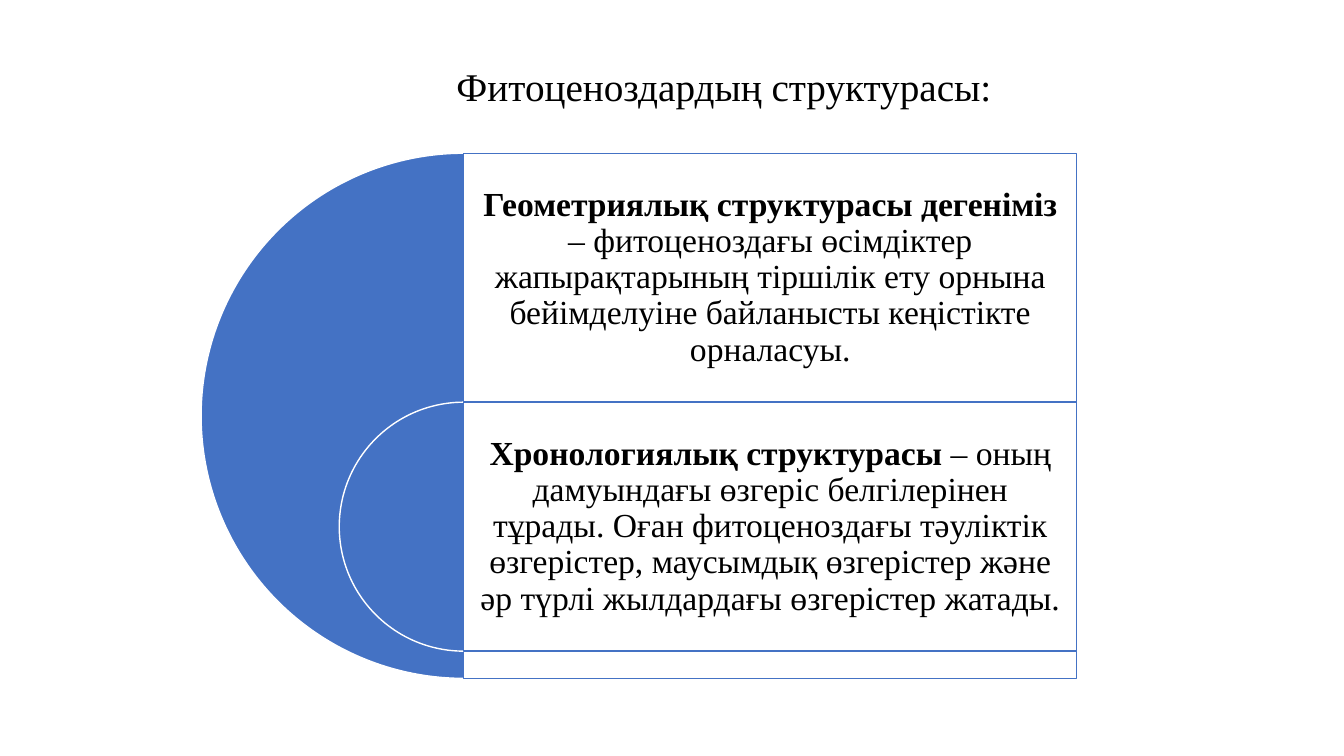
import pptx
import pptx.util
import pptx.dml.color
import pptx.enum.shapes
import pptx.enum.text
from lxml import etree
from pptx.oxml.ns import qn

Inches = pptx.util.Inches
Pt = pptx.util.Pt
Shape = pptx.enum.shapes.MSO_SHAPE
BLUE = pptx.dml.color.RGBColor(0x44, 0x72, 0xC4)
WHITE = pptx.dml.color.RGBColor(0xFF, 0xFF, 0xFF)
BLACK = pptx.dml.color.RGBColor(0, 0, 0)
FONT = "Times New Roman"

LEFT, TOP, WIDTH = 4.6, 1.52, 6.08
OUTER, INNER = 5.21, 2.47

TITLE = "Фитоценоздардың структурасы:"
PARTS = [
    ("Геометриялық структурасы дегеніміз ",
     "– фитоценоздағы өсімдіктер жапырақтарының тіршілік ету орнына "
     "бейімделуіне байланысты кеңістікте орналасуы."),
    ("Хронологиялық структурасы ",
     "– оның дамуындағы өзгеріс белгілерінен тұрады. Оған фитоценоздағы "
     "тәуліктік өзгерістер, маусымдық өзгерістер және әр түрлі жылдардағы "
     "өзгерістер жатады."),
]


def add_form(slide, kind, box, fill, line):
    form = slide.shapes.add_shape(kind, *map(Inches, box))
    form.shadow.inherit = False
    form.fill.solid()
    form.fill.fore_color.rgb = fill
    form.line.color.rgb = line
    form.line.width = Pt(1)
    return form


def add_half(slide, top, size):
    """Draw the left half of a disc centred on the panels' left edge."""
    half = add_form(slide, Shape.PIE, (LEFT - size / 2, top, size, size),
                    BLUE, WHITE)
    half.adjustments[0] = 54
    half.adjustments[1] = 162


def add_panel(slide, top, height):
    """Draw a white panel of 90% opacity."""
    panel = add_form(slide, Shape.RECTANGLE, (LEFT, top, WIDTH, height),
                     WHITE, BLUE)
    color = panel.fill._xPr.find(qn("a:solidFill"))[0]
    etree.SubElement(color, qn("a:alpha"), val="90000")


def add_text(slide, box, size, runs):
    """Add centred text; runs are pairs of words and a bold flag."""
    frame = slide.shapes.add_textbox(*map(Inches, box)).text_frame
    frame.word_wrap = True
    frame.vertical_anchor = pptx.enum.text.MSO_ANCHOR.MIDDLE
    frame.margin_top = frame.margin_bottom = Inches(0.1)
    para = frame.paragraphs[0]
    para.alignment = pptx.enum.text.PP_ALIGN.CENTER
    para.line_spacing = 0.9
    para.font.name = FONT
    para.font.size = Pt(size)
    para.font.color.rgb = BLACK
    for words, bold in runs:
        run = para.add_run()
        run.text = words
        run.font.bold = bold


def main():
    deck = pptx.Presentation()
    deck.slide_width = Inches(13.33)
    deck.slide_height = Inches(7.5)
    slide = deck.slides.add_slide(deck.slide_layouts[6])

    add_text(slide, (1.43, 0.16, 11.5, 1.45), 28, [(TITLE, False)])
    for row, (term, body) in enumerate(PARTS):
        top = TOP + row * INNER
        size = INNER if row else OUTER
        add_half(slide, top, size)
        add_panel(slide, top, size)
        add_text(slide, (LEFT, top, WIDTH, INNER), 24,
                 [(term, True), (body, False)])
    deck.save("out.pptx")


if __name__ == "__main__":
    main()
